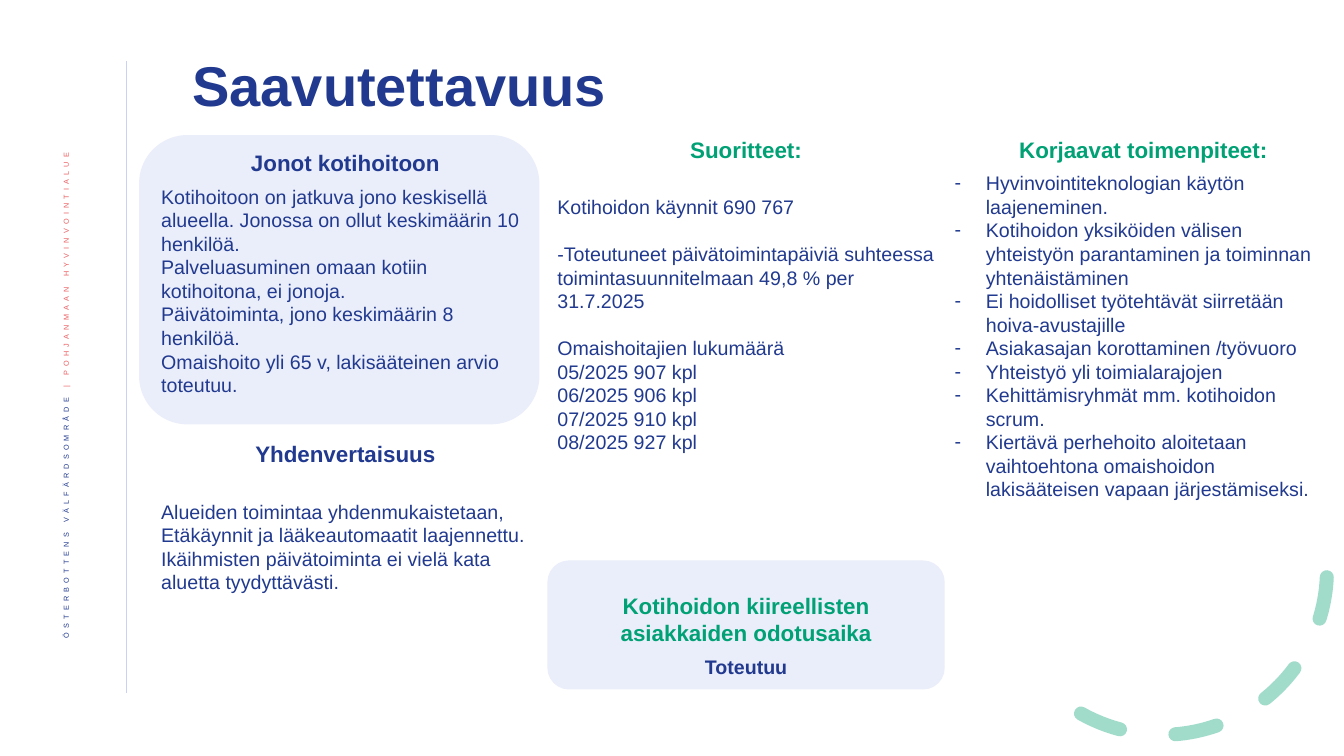
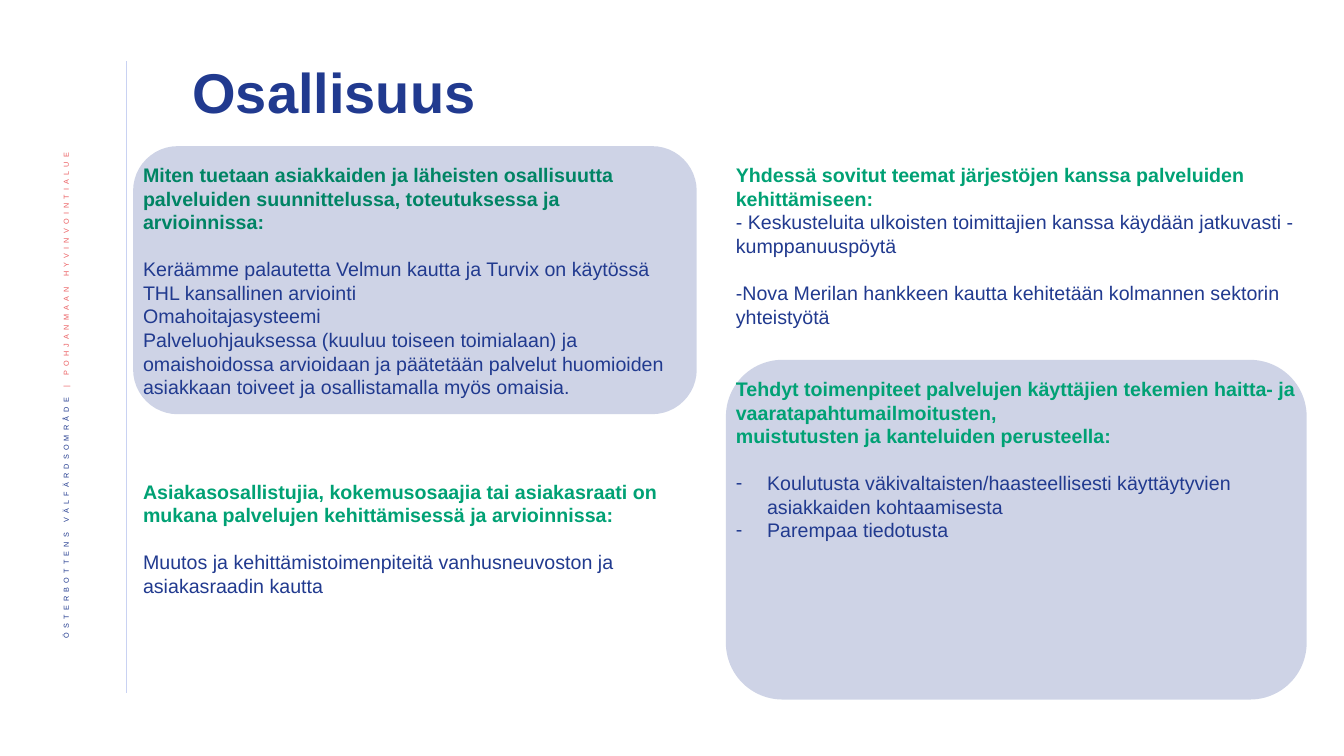
from dataclasses import dataclass

from lxml import etree
from pptx import Presentation
from pptx.dml.color import RGBColor
from pptx.enum.dml import MSO_LINE
from pptx.enum.shapes import MSO_CONNECTOR, MSO_SHAPE as Shp
from pptx.enum.text import MSO_ANCHOR as Anchor, PP_ALIGN as Align
from pptx.oxml.ns import qn
from pptx.util import Inches, Pt


# Theme
@dataclass(frozen=True)
class Theme:
    font: str = "Arial"
    navy: str = "213A8F"
    green: str = "00A174"
    deep: str = "008464"
    coral: str = "EB5C5F"
    pale: str = "C9D2F2"
    title: int = 40
    head: int = 16
    body: int = 14
    side: int = 9
    gap: float = 16.8
    hang: float = 0.31


T = Theme()

# Paragraph styles: size, colour, bold, centred, then extras
STYLES = {
    "title": dict(size=T.title, color=T.navy, bold=True, lead=0.9),
    "navy": dict(size=T.head, color=T.navy, bold=True, mid=True, lead=0.9, after=6),
    "green": dict(size=T.head, color=T.green, bold=True, mid=True, after=6),
    "state": dict(size=T.body, color=T.navy, bold=True, mid=True),
    "lead": dict(size=T.body, color=T.green, bold=True),
    "deep": dict(size=T.body, color=T.deep, bold=True),
    "text": dict(size=T.body, color=T.navy),
    "open": dict(size=T.body, color=T.navy, before=T.gap),
    "dash": dict(size=T.body, color=T.navy, dash=True),
    "first": dict(size=T.body, color=T.navy, dash=True, before=T.gap),
}

# Content: cards are (box, colour, opacity), texts are (box, paragraphs)
SIDE = [("ÖSTERBOTTENS VÄLFÄRDSOMRÅDE ", T.navy),
        ("| POHJANMAAN HYVINVOINTIALUE", T.coral)]

ACCESS = dict(
    title=("Saavutettavuus", (1.81, 0.45, 10.2, 0.85)),
    arc=(9.89, 4.02, 3.27, 3.27),
    cards=[((1.38, 1.34, 3.97, 2.87), T.pale, 38),
           ((5.43, 5.56, 3.94, 1.28), T.pale, 38)],
    texts=[
        ((1.5, 1.46, 3.85, 2.55), [
            ("navy", "Jonot kotihoitoon"),
            ("text", "Kotihoitoon on jatkuva jono keskisellä alueella. "
                     "Jonossa on ollut keskimäärin 10 henkilöä."),
            ("text", "Palveluasuminen omaan kotiin kotihoitona, ei jonoja."),
            ("text", "Päivätoiminta, jono keskimäärin 8 henkilöä."),
            ("text", "Omaishoito yli 65 v, lakisääteinen arvio toteutuu."),
        ]),
        ((1.5, 4.35, 3.85, 1.61), [
            ("navy", "Yhdenvertaisuus"),
            ("open", "Alueiden toimintaa yhdenmukaistetaan, "
                     "Etäkäynnit ja lääkeautomaatit laajennettu."),
            ("text", "Ikäihmisten päivätoiminta ei vielä kata aluetta "
                     "tyydyttävästi."),
        ]),
        ((5.43, 1.3, 3.94, 3.52), [
            ("green", "Suoritteet:"),
            ("open", "Kotihoidon käynnit 690 767"),
            ("open", "-Toteutuneet päivätoimintapäiviä suhteessa "
                     "toimintasuunnitelmaan 49,8 % per 31.7.2025"),
            ("open", "Omaishoitajien lukumäärä"),
            ("text", "05/2025 907 kpl"),
            ("text", "06/2025 906 kpl"),
            ("text", "07/2025 910 kpl"),
            ("text", "08/2025 927 kpl"),
        ]),
        ((9.37, 1.3, 3.94, 3.99), [
            ("green", "Korjaavat toimenpiteet:"),
            ("dash", "Hyvinvointiteknologian käytön laajeneminen."),
            ("dash", "Kotihoidon yksiköiden välisen yhteistyön parantaminen "
                     "ja toiminnan yhtenäistäminen"),
            ("dash", "Ei hoidolliset työtehtävät siirretään hoiva-avustajille"),
            ("dash", "Asiakasajan korottaminen /työvuoro"),
            ("dash", "Yhteistyö yli toimialarajojen"),
            ("dash", "Kehittämisryhmät mm. kotihoidon scrum."),
            ("dash", "Kiertävä perhehoito aloitetaan vaihtoehtona omaishoidon "
                     "lakisääteisen vapaan järjestämiseksi."),
        ]),
        ((5.43, 5.83, 3.94, 0.96), [
            ("green", "Kotihoidon kiireellisten asiakkaiden odotusaika"),
            ("state", "Toteutuu"),
        ]),
    ],
)

VOICE = dict(
    title=("Osallisuus", (1.81, 0.45, 9.98, 0.99)),
    cards=[((1.32, 1.45, 5.59, 2.66), T.navy, 22),
           ((7.2, 3.57, 5.76, 3.37), T.navy, 22)],
    texts=[
        ((1.32, 1.57, 5.59, 2.46), [
            ("deep", "Miten tuetaan asiakkaiden ja läheisten osallisuutta "
                     "palveluiden suunnittelussa, toteutuksessa ja arvioinnissa:"),
            ("open", "Keräämme palautetta Velmun kautta ja Turvix on käytössä"),
            ("text", "THL kansallinen arviointi"),
            ("text", "Omahoitajasysteemi"),
            ("text", "Palveluohjauksessa (kuuluu toiseen toimialaan) ja "
                     "omaishoidossa arvioidaan ja päätetään palvelut huomioiden "
                     "asiakkaan toiveet ja osallistamalla myös omaisia."),
        ]),
        ((1.32, 4.71, 5.59, 1.51), [
            ("lead", "Asiakasosallistujia, kokemusosaajia tai asiakasraati on "
                     "mukana palvelujen kehittämisessä ja arvioinnissa:"),
            ("open", "Muutos ja kehittämistoimenpiteitä vanhusneuvoston ja "
                     "asiakasraadin kautta"),
        ]),
        ((7.2, 1.57, 5.76, 1.75), [
            ("lead", "Yhdessä sovitut teemat järjestöjen kanssa palveluiden "
                     "kehittämiseen:"),
            ("text", "- Keskusteluita ulkoisten toimittajien kanssa käydään "
                     "jatkuvasti - kumppanuuspöytä"),
            ("open", "-Nova Merilan hankkeen kautta kehitetään kolmannen "
                     "sektorin yhteistyötä"),
        ]),
        ((7.2, 3.69, 5.76, 1.75), [
            ("lead", "Tehdyt toimenpiteet palvelujen käyttäjien tekemien "
                     "haitta- ja vaaratapahtumailmoitusten,"),
            ("lead", "muistutusten ja kanteluiden perusteella:"),
            ("first", "Koulutusta väkivaltaisten/haasteellisesti käyttäytyvien "
                      "asiakkaiden kohtaamisesta"),
            ("dash", "Parempaa tiedotusta"),
        ]),
    ],
)


# Helpers
def rgb(code):
    return RGBColor.from_string(code)


def place(box):
    return [Inches(v) for v in box]


def fade(fill, share):
    color = fill._xPr.find(qn("a:solidFill"))[0]
    etree.SubElement(color, qn("a:alpha")).set("val", str(share * 1000))


def add_run(para, text, size, color, bold=False):
    run = para.add_run()
    run.text = text
    font = run.font
    font.name, font.size, font.bold = T.font, Pt(size), bold
    font.color.rgb = rgb(color)
    return run


def add_para(para, text, size, color, bold=False, mid=False, lead=1.0,
             before=0, after=0, dash=False):
    if dash:
        props = para._p.get_or_add_pPr()
        props.set("marL", str(Inches(T.hang)))
        props.set("indent", str(-Inches(T.hang)))
        etree.SubElement(props, qn("a:buFont")).set("typeface", T.font)
        etree.SubElement(props, qn("a:buChar")).set("char", "-")
    para.alignment = Align.CENTER if mid else Align.LEFT
    para.line_spacing = lead
    para.space_before, para.space_after = Pt(before), Pt(after)
    add_run(para, text, size, color, bold)


def add_text(slide, box, paras, anchor=Anchor.TOP):
    frame = slide.shapes.add_textbox(*place(box)).text_frame
    frame.word_wrap = True
    frame.vertical_anchor = anchor
    for i, (style, text) in enumerate(paras):
        para = frame.add_paragraph() if i else frame.paragraphs[0]
        add_para(para, text, **STYLES[style])


def add_card(slide, box, color, share):
    card = slide.shapes.add_shape(Shp.ROUNDED_RECTANGLE, *place(box))
    card.shadow.inherit = False
    card.fill.solid()
    card.fill.fore_color.rgb = rgb(color)
    fade(card.fill, share)
    card.line.fill.background()


def add_arc(slide, box):
    arc = slide.shapes.add_shape(Shp.ARC, *place(box))
    arc.shadow.inherit = False
    # Start and end angles in degrees, at 0.6 units each
    for i, angle in enumerate((263.62, 29.69)):
        arc.adjustments[i] = angle * 0.6
    arc.rotation = 98.9
    arc.fill.background()
    line = arc.line
    line.color.rgb = rgb(T.green)
    line.width = Pt(10)
    line.dash_style = MSO_LINE.DASH
    fade(line.fill, 36)
    line._ln.set("cap", "rnd")


def add_frame(slide):
    # Rule at the left
    ends = place((1.25, 0.61, 1.25, 6.88))
    rule = slide.shapes.add_connector(MSO_CONNECTOR.STRAIGHT, *ends)
    rule.line.color.rgb = rgb(T.pale)
    rule.line.width = Pt(0.5)
    etree.SubElement(rule._element.spPr, qn("a:effectLst"))
    # Upright organisation name
    frame = slide.shapes.add_textbox(*place((0.42, 1.42, 0.52, 5.73))).text_frame
    frame.word_wrap = True
    frame.vertical_anchor = Anchor.MIDDLE
    frame._txBody.bodyPr.set("vert", "vert270")
    para = frame.paragraphs[0]
    para.alignment, para.line_spacing = Align.RIGHT, 0.9
    for text, color in SIDE:
        props = add_run(para, text, T.side, color)._r.get_or_add_rPr()
        props.set("baseline", "30000")
        props.set("spc", "300")


def build(deck, data):
    slide = deck.slides.add_slide(deck.slide_layouts[6])
    add_frame(slide)
    if "arc" in data:
        add_arc(slide, data["arc"])
    title, box = data["title"]
    add_text(slide, box, [("title", title)], Anchor.MIDDLE)
    for card in data["cards"]:
        add_card(slide, *card)
    for box, paras in data["texts"]:
        add_text(slide, box, paras)


def main():
    deck = Presentation()
    deck.slide_width, deck.slide_height = Inches(13.33), Inches(7.5)
    for data in (ACCESS, VOICE):
        build(deck, data)
    deck.save("out.pptx")


if __name__ == "__main__":
    main()
